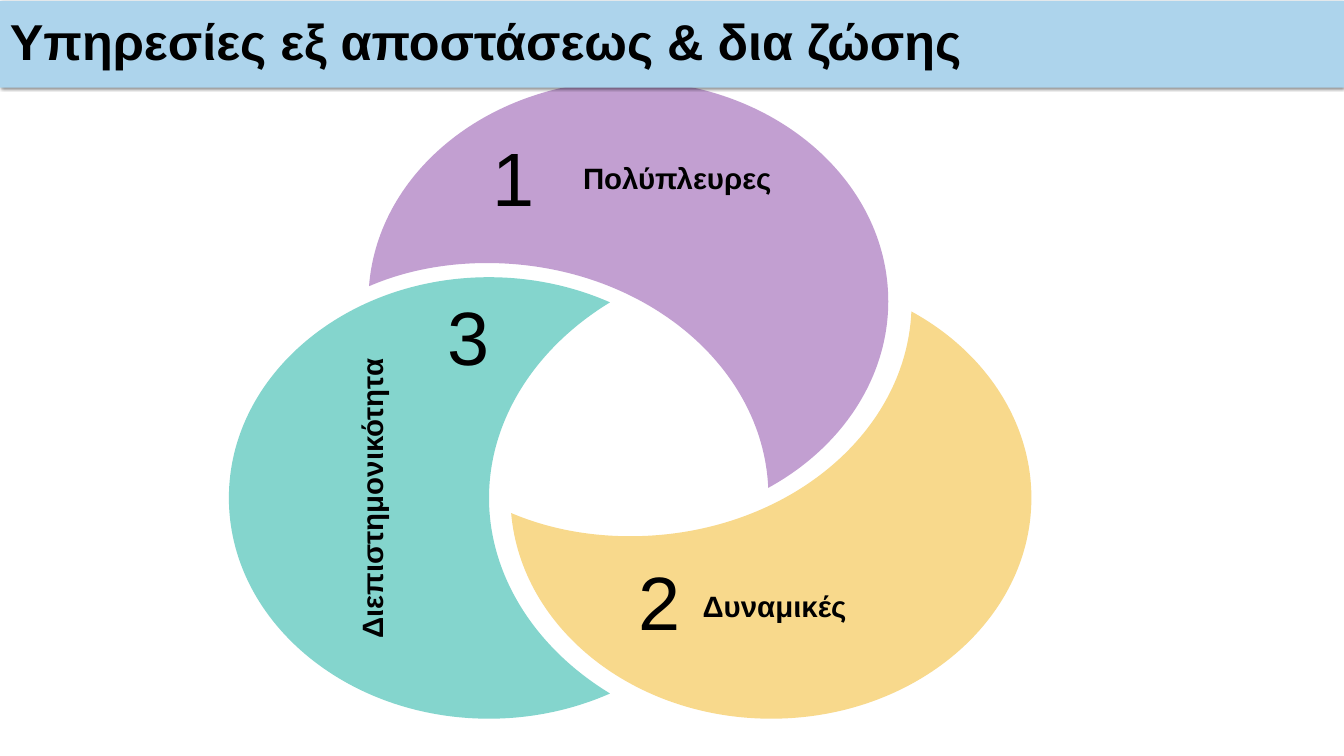
from math import atan2, ceil, cos, pi, sin, tan

from lxml import etree
from pptx import Presentation
from pptx.dml.color import RGBColor
from pptx.enum.shapes import MSO_SHAPE
from pptx.enum.text import MSO_ANCHOR, PP_ALIGN
from pptx.oxml.ns import qn
from pptx.util import Inches, Pt

LEFT, MID, RIGHT = PP_ALIGN.LEFT, PP_ALIGN.CENTER, PP_ALIGN.RIGHT
TOP, MIDDLE = MSO_ANCHOR.TOP, MSO_ANCHOR.MIDDLE
RECT = MSO_SHAPE.RECTANGLE
OUTER, INNER = (2.58, 2.19), (2.8, 2.33)
QUARTER = pi / 2


def arc(hub, radii, start, end):
    """Bezier points of a clockwise ellipse arc, split where it turns vertical or level."""
    first, last = [atan2((y - hub[1]) / radii[1], (x - hub[0]) / radii[0])
                   for x, y in (start, end)]
    last = first + (last - first) % (2 * pi)
    turns = [k * QUARTER for k in range(ceil(first / QUARTER), ceil(last / QUARTER))]
    turns = [first] + turns + [last]
    points = [start]
    for a, b in zip(turns, turns[1:]):
        pull = 4 / 3 * tan((b - a) / 4)
        for t, k in ((a, pull), (b, -pull), (b, 0)):
            points.append((hub[0] + radii[0] * (cos(t) - k * sin(t)),
                           hub[1] + radii[1] * (sin(t) + k * cos(t))))
    points[-1] = end
    return points


def write(shape, text, size, bold, align, anchor):
    frame = shape.text_frame
    frame.word_wrap = True
    frame.vertical_anchor = anchor
    para = frame.paragraphs[0]
    para.text = text
    para.alignment = align
    font = para.font
    font.name, font.size, font.bold = "Arial", Pt(size), bold
    font.color.rgb = RGBColor.from_string("000000")
    return para


deck = Presentation()
deck.slide_width, deck.slide_height = Inches(13.33), Inches(7.5)
slide = deck.slides.add_slide(deck.slide_layouts[6])
wheel = slide.shapes.add_group_shape().shapes

# Petals: colour, outer centre, inner centre, first and last tip
petals = [
    ("84D5CD", (4.85, 4.94), (7.65, 4.94), (6.05, 6.88), (6.05, 3)),
    ("F8D98C", (7.65, 4.94), (6.25, 2.99), (9.04, 3.09), (5.07, 5.09)),
    ("C29FD1", (6.23, 2.99), (4.83, 4.94), (3.66, 2.84), (7.62, 4.84)),
]
for color, outer, inner, start, end in petals:
    edge = arc(outer, OUTER, start, end) + arc(inner, INNER, start, end)[::-1][1:]
    points = [(Inches(x), Inches(y)) for x, y in edge]
    pen = wheel.build_freeform(*points[0])
    pen.add_line_segments(points[3::3], close=True)
    petal = pen.convert_to_shape()
    lines = list(petal._element.iter(qn("a:lnTo")))
    for i, line in enumerate(lines):
        line.tag = qn("a:cubicBezTo")
        line.clear()
        for x, y in points[3 * i + 1:3 * i + 4]:
            etree.SubElement(line, qn("a:pt"), x=str(x - petal.left), y=str(y - petal.top))
    petal.shadow.inherit = False
    petal.fill.solid()
    petal.fill.fore_color.rgb = RGBColor.from_string(color)
    petal.line.fill.background()

labels = [
    ("Δυναμικές", 6.87, 5.79, 2.41, 0.56, LEFT, 0),
    ("Πολύπλευρες", 4.67, 1.54, 3.08, 0.56, RIGHT, 0),
    ("Διεπιστημονικότητα", 1.91, 4.61, 3.77, 0.67, MID, 270),
]
for text, x, y, wide, high, align, angle in labels:
    box = wheel.add_textbox(Inches(x), Inches(y), Inches(wide), Inches(high))
    box.rotation = angle
    write(box, text, 21, True, align, TOP)

for digit, x, y in [("2", 6.09, 5.33), ("1", 4.64, 1.12), ("3", 4.19, 2.7)]:
    box = wheel.add_textbox(Inches(x), Inches(y), Inches(0.91), Inches(1.25))
    write(box, digit, 54, False, MID, MIDDLE)

banner = slide.shapes.add_shape(RECT, 0, Inches(0.01), Inches(13.33), Inches(0.86))
banner.fill.solid()
banner.fill.fore_color.rgb = RGBColor.from_string("ADD4EC")
banner.line.fill.background()
banner.shadow.inherit = False
effects = banner._element.spPr.find(qn("a:effectLst"))
shadow = etree.SubElement(effects, qn("a:outerShdw"), blurRad=str(Pt(2)),
                          dist=str(Pt(0.5)), dir="5400000", rotWithShape="0")
tint = etree.SubElement(shadow, qn("a:srgbClr"), val="000000")
etree.SubElement(tint, qn("a:alpha"), val="46000")
title = write(banner, "Υπηρεσίες εξ αποστάσεως & δια ζώσης", 36, True, LEFT, MIDDLE)
title.line_spacing = 0.9

deck.save("out.pptx")
